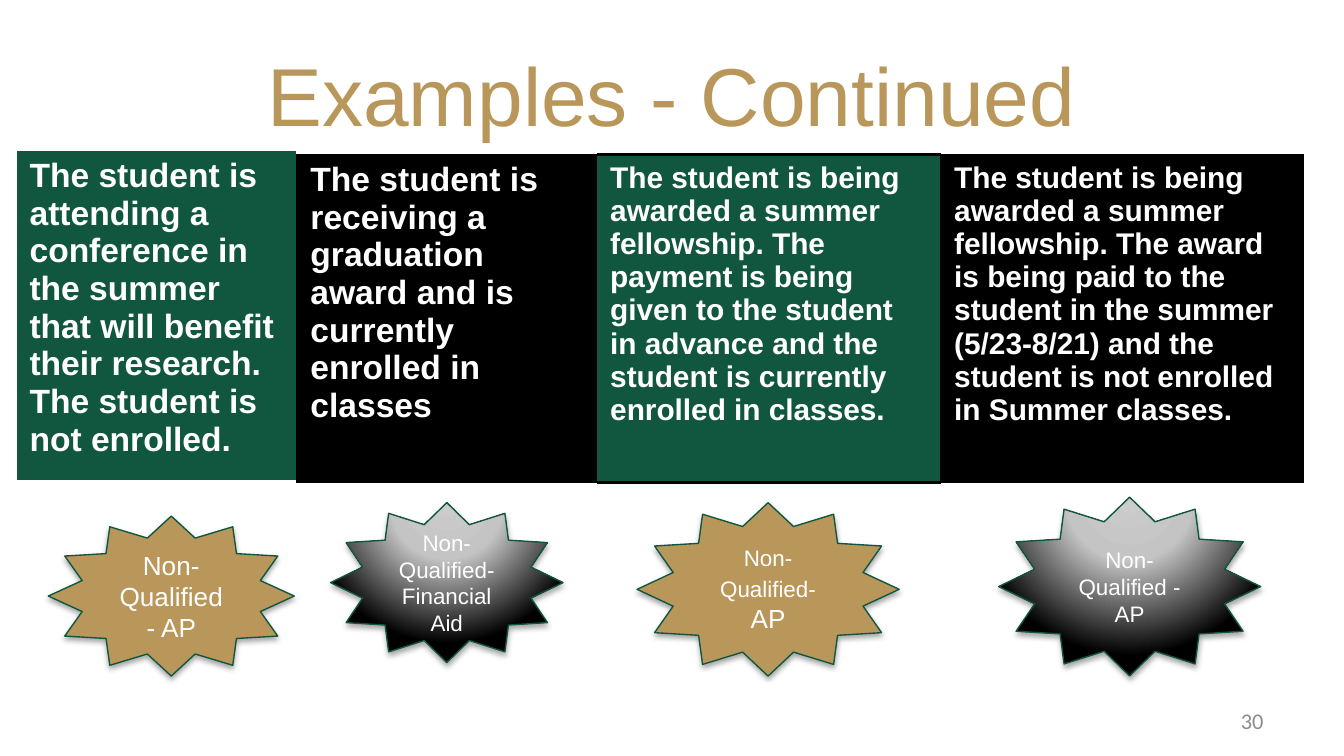
from lxml import etree
from pptx import Presentation
from pptx.dml.color import RGBColor
from pptx.enum.shapes import MSO_SHAPE
from pptx.enum.text import MSO_ANCHOR, PP_ALIGN
from pptx.oxml import parse_xml
from pptx.oxml.ns import nsdecls, qn
from pptx.util import Inches, Pt

STAR = MSO_SHAPE.STAR_12_POINT
MIDDLE = MSO_ANCHOR.MIDDLE
CENTER = PP_ALIGN.CENTER
RIGHT = PP_ALIGN.RIGHT

GOLD = RGBColor(0xB9, 0x97, 0x5B)
GREEN = RGBColor(0x11, 0x57, 0x40)
EDGE = RGBColor(0x0F, 0x57, 0x3F)
BLACK = RGBColor(0, 0, 0)
WHITE = RGBColor(0xFF, 0xFF, 0xFF)
GRAY = RGBColor(0x8C, 0x8C, 0x8C)
LIGHT = RGBColor(0xCC, 0xCC, 0xCC)
SILVER = RGBColor(0xC4, 0xC4, 0xC4)

SIDES = ("L", "R", "T", "B")
GLOW = ((0, LIGHT), (40, SILVER), (100, BLACK))

CARDS = [
    ((0.12, 1.12, 2.09, 2.47), GREEN, 18, WHITE, (1, 1, 1, 3),
     "The student is attending a conference in the summer that will benefit "
     "their research. The student is not enrolled."),
    ((2.21, 1.15, 2.23, 2.44), BLACK, 18, BLACK, (0.75,) * 4,
     "The student is receiving a graduation award and is currently enrolled "
     "in classes"),
    ((4.44, 1.15, 2.56, 2.44), GREEN, 16, BLACK, (0, 0, 2, 2),
     "The student is being awarded a summer fellowship. The payment is being "
     "given to the student in advance and the student is currently enrolled "
     "in classes."),
    ((7, 1.15, 2.7, 2.44), BLACK, 16, BLACK, (0.75,) * 4,
     "The student is being awarded a summer fellowship. The award is being "
     "paid to the student in the summer (5/23-8/21) and the student is not "
     "enrolled in Summer classes."),
]

BURSTS = [
    ((0.36, 3.84, 1.83, 1.19), True, [("Non-Qualified- AP", 14)]),
    ((2.46, 3.74, 1.73, 1.19), False, [("Non-Qualified- Financial Aid", 12)]),
    ((4.74, 3.74, 1.95, 1.29), True, [("Non-Qualified-", 12), (" AP", 14)]),
    ((7.43, 3.7, 1.95, 1.33), False, [("Non-Qualified - AP", 12)]),
]


def set_font(font, size, color, name="Arial", bold=False):
    font.name = name
    font.size = Pt(size)
    font.bold = bold
    font.color.rgb = color


def add_title(slide, box, text):
    title = slide.shapes.title
    title.left, title.top, title.width, title.height = map(Inches, box)
    frame = title.text_frame
    frame.text = text
    frame.vertical_anchor = MIDDLE
    para = frame.paragraphs[0]
    para.alignment = CENTER
    set_font(para.font, 44, GOLD)


def set_edges(cell, color, widths):
    props = cell._tc.get_or_add_tcPr()
    for spot, (side, width) in enumerate(zip(SIDES, widths)):
        paint = (f'<a:solidFill><a:srgbClr val="{color}"/></a:solidFill>'
                 if width else "<a:noFill/>")
        props.insert(spot, parse_xml(
            f'<a:ln{side} {nsdecls("a")} w="{int(Pt(width))}">{paint}</a:ln{side}>'))


def add_card(slide, box, fill, size, edge, widths, text):
    table = slide.shapes.add_table(1, 1, *map(Inches, box)).table
    table.first_row = False
    table.horz_banding = False
    cell = table.cell(0, 0)
    cell.fill.solid()
    cell.fill.fore_color.rgb = fill
    set_edges(cell, edge, widths)
    cell.text = text
    set_font(cell.text_frame.paragraphs[0].font, size, WHITE, bold=True)


def add_glow(shape):
    stops = "".join(
        f'<a:gs pos="{spot * 1000}"><a:srgbClr val="{color}"/></a:gs>'
        for spot, color in GLOW)
    props = shape._element.spPr
    props.find(qn("a:prstGeom")).addnext(parse_xml(
        f'<a:gradFill {nsdecls("a")} rotWithShape="1"><a:gsLst>{stops}</a:gsLst>'
        '<a:path path="circle"><a:fillToRect l="50000" t="-80000" r="50000" '
        'b="180000"/></a:path></a:gradFill>'))


def add_shadow(shape):
    shape.shadow.inherit = False
    effects = shape._element.spPr.find(qn("a:effectLst"))
    shade = etree.SubElement(
        effects, qn("a:outerShdw"), blurRad=str(int(Pt(3.1))),
        dist=str(int(Pt(1.8))), dir="5400000", rotWithShape="0")
    color = etree.SubElement(shade, qn("a:srgbClr"), val=str(BLACK))
    etree.SubElement(color, qn("a:alpha"), val="35000")


def add_burst(slide, box, gold, parts):
    star = slide.shapes.add_shape(STAR, *map(Inches, box))
    if gold:
        star.fill.solid()
        star.fill.fore_color.rgb = GOLD
    else:
        add_glow(star)
    star.line.color.rgb = EDGE
    star.line.width = Pt(0.75)
    add_shadow(star)
    frame = star.text_frame
    frame.word_wrap = True
    frame.vertical_anchor = MIDDLE
    para = frame.paragraphs[0]
    para.alignment = CENTER
    for text, size in parts:
        run = para.add_run()
        run.text = text
        set_font(run.font, size, WHITE)


def add_number(slide, box, text):
    frame = slide.shapes.add_textbox(*map(Inches, box)).text_frame
    frame.word_wrap = True
    frame.vertical_anchor = MIDDLE
    frame.text = text
    para = frame.paragraphs[0]
    para.alignment = RIGHT
    set_font(para.font, 12, GRAY, "Calibri")


def main():
    deck = Presentation()
    deck.slide_width = Inches(10)
    deck.slide_height = deck.slide_width * 9 // 16
    slide = deck.slides.add_slide(deck.slide_layouts[5])
    add_title(slide, (0.5, 0.23, 9, 0.94), "Examples - Continued")
    for card in CARDS:
        add_card(slide, *card)
    for burst in BURSTS:
        add_burst(slide, *burst)
    add_number(slide, (7.17, 5.21, 2.33, 0.3), "30")
    deck.save("out.pptx")


if __name__ == "__main__":
    main()
